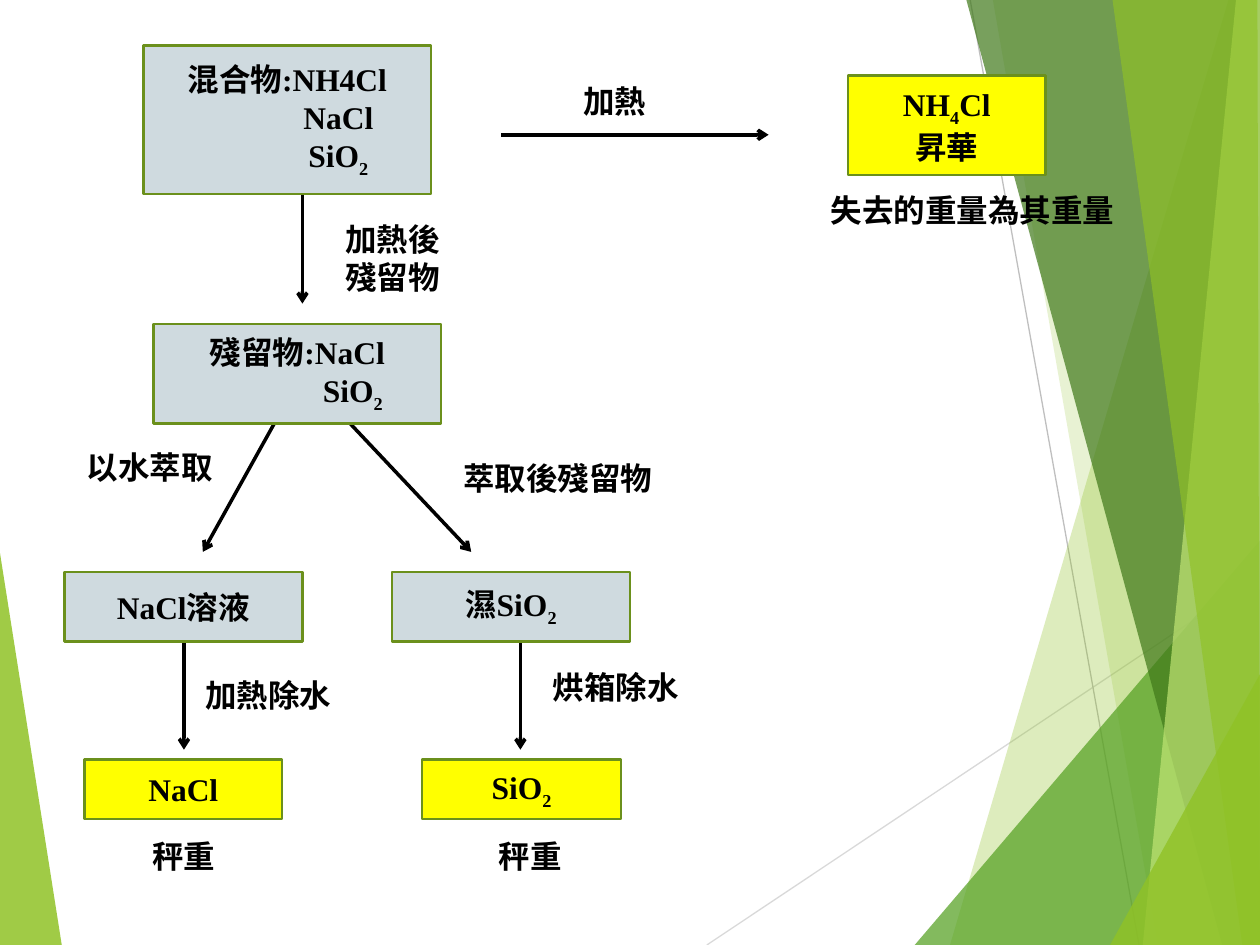
from lxml import etree
from pptx import Presentation
from pptx.dml.color import RGBColor
from pptx.enum.shapes import MSO_CONNECTOR, MSO_SHAPE
from pptx.enum.text import MSO_ANCHOR, MSO_AUTO_SIZE, PP_ALIGN
from pptx.oxml.ns import qn
from pptx.util import Inches, Pt

STRAIGHT = MSO_CONNECTOR.STRAIGHT
RECTANGLE = MSO_SHAPE.RECTANGLE
MIDDLE = MSO_ANCHOR.MIDDLE
GROW = MSO_AUTO_SIZE.SHAPE_TO_FIT_TEXT
LEFT, CENTER = PP_ALIGN.LEFT, PP_ALIGN.CENTER
CJK_FONT, LATIN_FONT = "Noto Sans CJK SC", "Times New Roman"
BLACK, GREY, YELLOW, OLIVE = "000000", "CFDADF", "FFFF00", "6B901C"

# Background: thin lines (start, end, colour), facets (colour, opacity %, corners)
THIN_LINES = [
    ((5.61, 7.5), (10, 4.57), "D9D9D9"),
    ((7.7, 0), (9.04, 7.5), "BFBFBF"),
]
FACETS = [
    ("90C226", 85, [(0, 4.39), (0.49, 7.5), (0, 7.5)]),
    ("90C226", 30, [(9.75, 0), (7.54, 7.5), (10, 7.5), (10, 0)]),
    ("90C226", 20, [(7.88, 0), (9.19, 7.5), (10, 7.5), (10, 0)]),
    ("54A021", 72, [(7.26, 7.5), (10, 4.29), (10, 7.5)]),
    ("3F7819", 70, [(7.67, 0), (9.7, 7.5), (10, 7.5), (10, 0)]),
    ("C0E474", 70, [(9.81, 0), (9.07, 7.5), (10, 7.5), (10, 0)]),
    ("90C226", 65, [(8.83, 0), (9.86, 7.5), (10, 7.5), (9.98, 0)]),
    ("90C226", 80, [(8.81, 7.5), (10, 5.35), (10, 7.5)]),
]

# Flow arrows: start, end
ARROWS = [
    ((3.98, 1.07), (6.1, 1.07)),
    ((2.4, 1.39), (2.4, 2.41)),
    ((2.4, 2.96), (1.61, 4.38)),
    ((2.4, 2.96), (3.74, 4.38)),
    ((1.46, 4.93), (1.46, 5.95)),
    ((4.13, 4.93), (4.13, 5.95)),
]

# Boxes: left, top, width, height, fill, lines, indent of the lines after the first
# "_" lowers the character that follows it
BOXES = [
    (6.73, 0.6, 1.57, 0.79, YELLOW, ["NH_4Cl", "昇華"], 0),
    (1.22, 2.57, 2.28, 0.79, GREY, ["殘留物:NaCl", "SiO_2"], 0.88),
    (1.14, 0.36, 2.28, 1.18, GREY, ["混合物:NH4Cl", "NaCl", "SiO_2"], 0.81),
    (0.51, 4.54, 1.89, 0.55, GREY, ["NaCl溶液"], 0),
    (3.11, 4.54, 1.89, 0.55, GREY, ["濕SiO_2"], 0),
    (0.67, 6.03, 1.57, 0.47, YELLOW, ["NaCl"], 0),
    (3.35, 6.03, 1.58, 0.47, YELLOW, ["SiO_2"], 0),
]

# Labels: left, top, width, height, text, alignment
LABELS = [
    (4.53, 0.6, 1.18, 0.4, "加熱", LEFT),
    (2.64, 1.7, 1.18, 0.71, "加熱後殘留物", LEFT),
    (0.59, 3.51, 1.42, 0.4, "以水萃取", LEFT),
    (3.58, 3.59, 1.89, 0.4, "萃取後殘留物", LEFT),
    (1.53, 5.32, 1.42, 0.4, "加熱除水", LEFT),
    (4.29, 5.25, 1.42, 0.4, "烘箱除水", LEFT),
    (0.75, 6.59, 1.42, 0.4, "秤重", CENTER),
    (3.5, 6.59, 1.42, 0.4, "秤重", CENTER),
    (6.34, 1.47, 2.76, 0.4, "失去的重量為其重量", CENTER),
]


def rgb(color):
    return RGBColor.from_string(color)


def inches(values):
    return [Inches(value) for value in values]


def add_line(slide, start, end, color, width, arrow=False):
    line = slide.shapes.add_connector(STRAIGHT, *inches(start + end))
    line.line.color.rgb = rgb(color)
    line.line.width = Pt(width)
    if arrow:
        etree.SubElement(line.line._get_or_add_ln(), qn("a:tailEnd"), type="arrow")
    etree.SubElement(line._element.spPr, qn("a:effectLst"))


def add_facet(slide, color, opacity, corners):
    first, *others = [inches(corner) for corner in corners]
    builder = slide.shapes.build_freeform(*first)
    builder.add_line_segments(others, close=True)
    facet = builder.convert_to_shape()
    facet.shadow.inherit = False
    facet.line.fill.background()
    facet.fill.solid()
    facet.fill.fore_color.rgb = rgb(color)
    color_element = facet._element.spPr.find(".//" + qn("a:srgbClr"))
    etree.SubElement(color_element, qn("a:alpha"), val=str(opacity * 1000))


def add_run(paragraph, text, font_name, lowered=False):
    run = paragraph.add_run()
    run.text = text
    font = run.font
    font.name, font.size, font.bold = font_name, Pt(18), True
    font.color.rgb = rgb(BLACK)
    properties = font._element
    properties.find(qn("a:latin")).addnext(
        properties.makeelement(qn("a:ea"), {"typeface": CJK_FONT}))
    if lowered:
        properties.set("baseline", "-25000")


def write(paragraph, text, font_name, alignment):
    paragraph.alignment = alignment
    start, *pieces = text.split("_")
    add_run(paragraph, start, font_name)
    for piece in pieces:
        add_run(paragraph, piece[0], font_name, lowered=True)
        if piece[1:]:
            add_run(paragraph, piece[1:], font_name)


def add_box(slide, place, fill, lines, indent):
    box = slide.shapes.add_shape(RECTANGLE, *inches(place))
    box.shadow.inherit = False
    box.fill.solid()
    box.fill.fore_color.rgb = rgb(fill)
    box.line.color.rgb = rgb(OLIVE)
    box.line.width = Pt(1.5)
    frame = box.text_frame
    frame.vertical_anchor = MIDDLE
    for number, text in enumerate(lines):
        paragraph = frame.add_paragraph() if number else frame.paragraphs[0]
        write(paragraph, text, LATIN_FONT, CENTER)
        if number and indent:
            paragraph._p.get_or_add_pPr().set("marL", str(Inches(indent)))


def add_label(slide, place, text, alignment):
    frame = slide.shapes.add_textbox(*inches(place)).text_frame
    frame.word_wrap = True
    frame.auto_size = GROW
    write(frame.paragraphs[0], text, CJK_FONT, alignment)


def main():
    presentation = Presentation()
    presentation.slide_width, presentation.slide_height = Inches(10), Inches(7.5)
    slide = presentation.slides.add_slide(presentation.slide_layouts[6])

    # Background
    for start, end, color in THIN_LINES:
        add_line(slide, start, end, color, 0.75)
    for facet in FACETS:
        add_facet(slide, *facet)

    # Flow chart: the boxes cover the ends of the arrows
    for start, end in ARROWS:
        add_line(slide, start, end, BLACK, 2, arrow=True)
    for *place, fill, lines, indent in BOXES:
        add_box(slide, place, fill, lines, indent)
    for *place, text, alignment in LABELS:
        add_label(slide, place, text, alignment)

    presentation.save("out.pptx")


if __name__ == "__main__":
    main()
